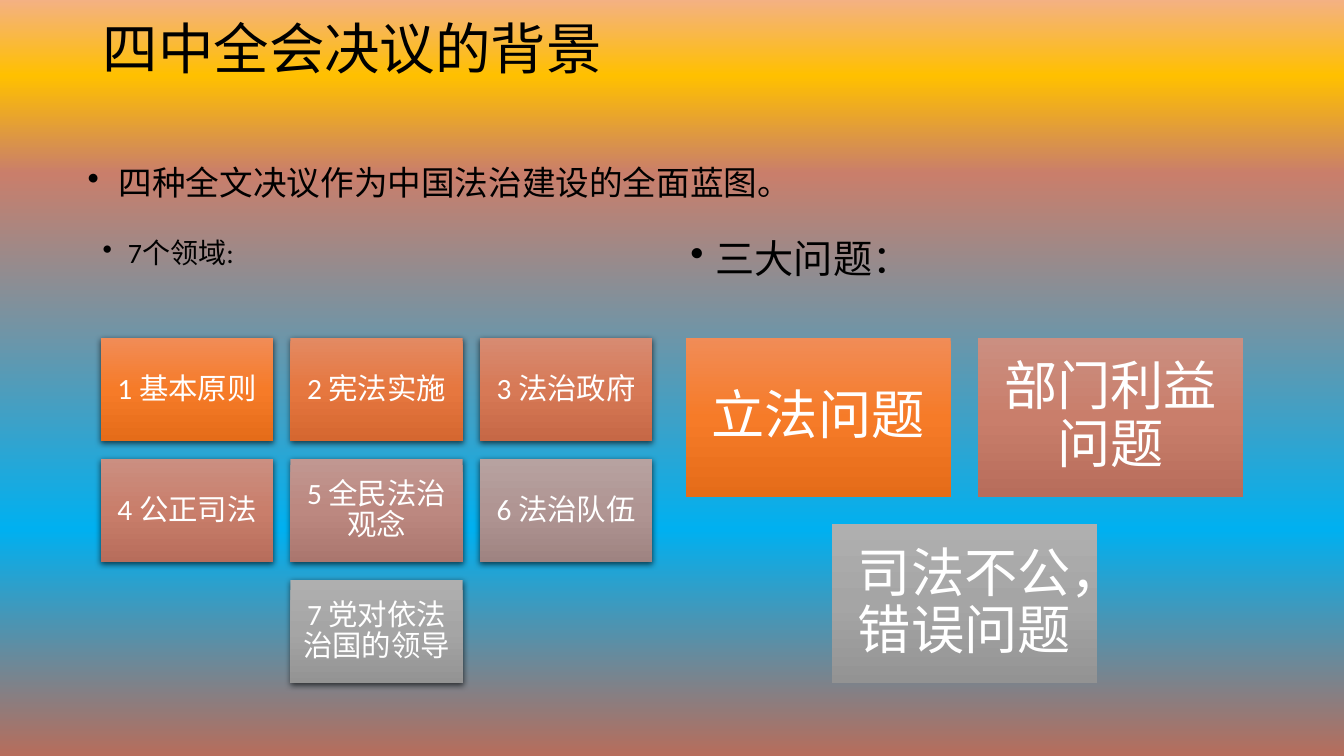
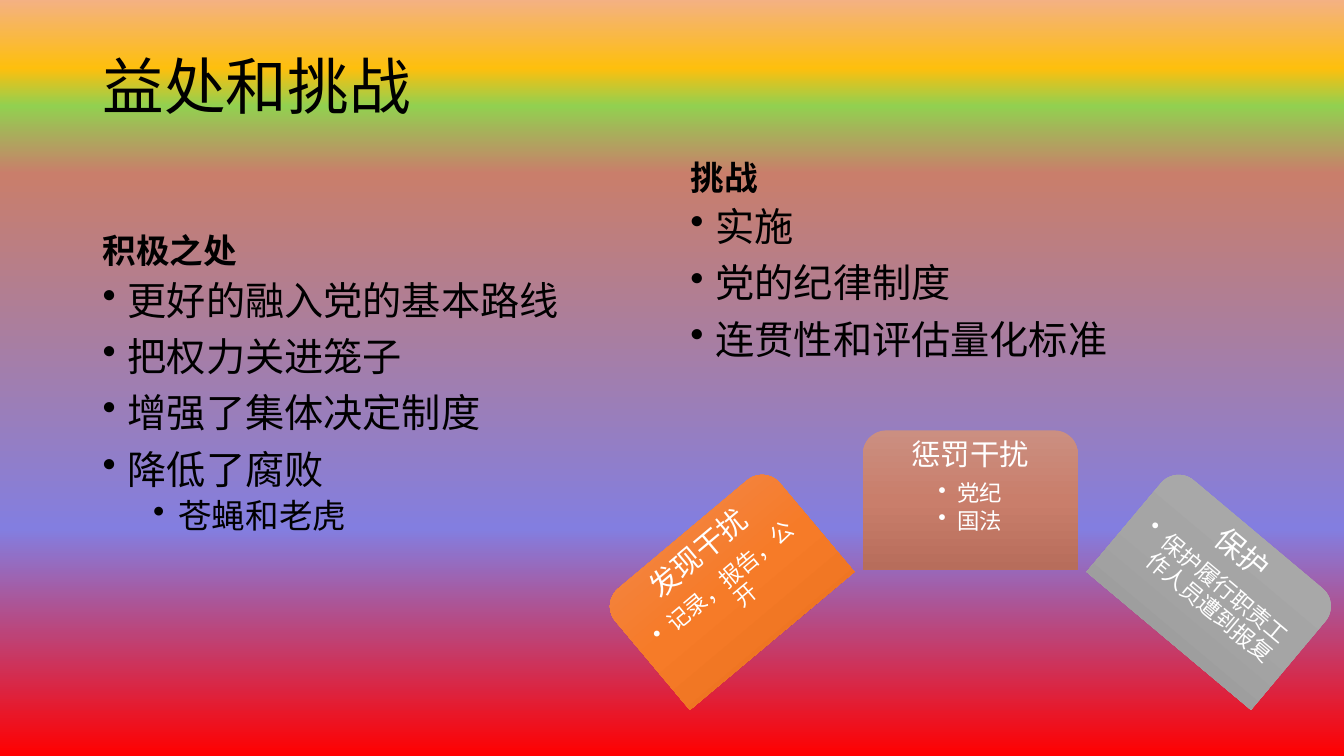
from dataclasses import dataclass

from lxml import etree
from pptx import Presentation
from pptx.dml.color import RGBColor
from pptx.enum.shapes import MSO_SHAPE
from pptx.enum.text import MSO_ANCHOR, PP_ALIGN
from pptx.oxml.ns import qn
from pptx.util import Inches, Pt

FONT = "Calibri"
BLACK = RGBColor(0x00, 0x00, 0x00)
WHITE = RGBColor(0xFF, 0xFF, 0xFF)
PEACH = RGBColor(0xF4, 0xB1, 0x83)
GOLD = RGBColor(0xFF, 0xC0, 0x00)
AMBER = RGBColor(0xFE, 0xBF, 0x0D)
GREEN = RGBColor(0x92, 0xD0, 0x50)
CLAY = RGBColor(0xC9, 0x7E, 0x6B)
DARK_CLAY = RGBColor(0xB7, 0x6D, 0x5B)
SKY = RGBColor(0x00, 0xB0, 0xF0)
VIOLET = RGBColor(0x83, 0x7E, 0xE0)
RED = RGBColor(0xFF, 0x00, 0x00)

ORANGE_TILE = (RGBColor(0xF1, 0x8C, 0x57), RGBColor(0xF6, 0x7B, 0x28), RGBColor(0xE5, 0x6C, 0x19))
RUST_TILE = (RGBColor(0xE3, 0x8A, 0x63), RGBColor(0xE6, 0x77, 0x3F), RGBColor(0xD5, 0x67, 0x30))
COPPER_TILE = (RGBColor(0xD7, 0x8B, 0x72), RGBColor(0xD7, 0x79, 0x56), RGBColor(0xC6, 0x68, 0x46))
CLAY_TILE = (RGBColor(0xCB, 0x8F, 0x81), CLAY, DARK_CLAY)
ROSE_TILE = (RGBColor(0xC1, 0x97, 0x91), RGBColor(0xBC, 0x88, 0x80), RGBColor(0xAA, 0x76, 0x6E))
TAUPE_TILE = (RGBColor(0xB7, 0xA2, 0xA0), RGBColor(0xB0, 0x95, 0x93), RGBColor(0x9E, 0x83, 0x81))
GRAY_TILE = (RGBColor(0xAF, 0xAF, 0xAF), RGBColor(0xA5, 0xA5, 0xA5), RGBColor(0x93, 0x93, 0x93))

BACKGROUND_SKY = ((0, PEACH), (10, GOLD), (23, CLAY), (70, SKY), (100, DARK_CLAY))
BACKGROUND_RED = ((0, PEACH), (9, AMBER), (14, GREEN), (23, CLAY), (70, VIOLET), (100, RED))

LEFT_COLUMN, LEFT_WIDTH = 0.92, 5.64
RIGHT_COLUMN, RIGHT_WIDTH = 6.75, 5.67
TITLE_WIDTH = 11.5


@dataclass
class Line:
    """One paragraph with its size, spacing and optional bullet."""
    text: str
    size: float
    bold: bool = False
    margin: float = 0
    hanging: float = 0
    before: float = 0
    after: float = 0
    spacing: float = 0.9


def apply_gradient(element, fill, stops):
    """Fill an element with a top-to-bottom gradient."""
    fill.gradient()
    fill.gradient_angle = 270
    stop_list = element.xpath(".//a:gsLst")[0]
    for old_stop in list(stop_list):
        stop_list.remove(old_stop)
    for position, color in stops:
        stop = etree.SubElement(stop_list, qn("a:gs"), pos=str(position * 1000))
        etree.SubElement(stop, qn("a:srgbClr"), val=str(color))


def add_bullet(paragraph, margin, hanging):
    """Give a paragraph a round bullet with a hanging indent."""
    properties = paragraph._p.get_or_add_pPr()
    properties.set("marL", str(Inches(margin)))
    properties.set("indent", str(-Inches(hanging)))
    etree.SubElement(properties, qn("a:buChar"), char="•")


def write_lines(frame, lines, color, align, anchor):
    """Write lines into a text frame and format them."""
    frame.word_wrap = True
    frame.vertical_anchor = anchor
    for index, line in enumerate(lines):
        paragraph = frame.add_paragraph() if index else frame.paragraphs[0]
        paragraph.text = line.text
        if line.hanging:
            add_bullet(paragraph, line.margin, line.hanging)
        paragraph.alignment = align
        paragraph.line_spacing = line.spacing
        paragraph.space_before = Pt(line.before if index else 0)
        paragraph.space_after = Pt(line.after)
        font = paragraph.runs[0].font
        font.name = FONT
        font.size = Pt(line.size)
        font.bold = line.bold
        font.color.rgb = color


def add_text(slide, box, lines, anchor=MSO_ANCHOR.TOP):
    """Add a black, left-aligned text box."""
    text_box = slide.shapes.add_textbox(*map(Inches, box))
    write_lines(text_box.text_frame, lines, BLACK, PP_ALIGN.LEFT, anchor)


def add_title(slide, title, top, height, size):
    """Add the slide title."""
    add_text(slide, (LEFT_COLUMN, top, TITLE_WIDTH, height), [Line(title, size)], MSO_ANCHOR.MIDDLE)


def bullets(texts, size=28):
    """Return first-level bullet lines."""
    return [Line(text, size, margin=0.25, hanging=0.25, before=10) for text in texts]


def add_shadow(shape):
    """Add a soft shadow below a shape."""
    effects = shape._element.spPr.find(qn("a:effectLst"))
    shadow = etree.SubElement(effects, qn("a:outerShdw"), blurRad=str(Pt(4.5)),
                              dist=str(Pt(1.5)), dir="5400000", rotWithShape="0")
    shade = etree.SubElement(shadow, qn("a:srgbClr"), val=str(BLACK))
    etree.SubElement(shade, qn("a:alpha"), val="63000")


def add_tile(slide, geometry, box, colors, lines, insets, anchor=MSO_ANCHOR.MIDDLE):
    """Add a gradient tile with centred white text."""
    tile = slide.shapes.add_shape(geometry, *map(Inches, box))
    tile.shadow.inherit = False
    tile.line.fill.background()
    apply_gradient(tile._element, tile.fill, zip((0, 50, 100), colors))
    frame = tile.text_frame
    frame.margin_left = frame.margin_right = Inches(insets[0])
    frame.margin_top = frame.margin_bottom = Inches(insets[1])
    write_lines(frame, lines, WHITE, PP_ALIGN.CENTER, anchor)
    return tile


def add_tile_grid(slide, tiles, columns, origin, tile_size, gap, font_size, inset, shadow=False):
    """Lay tiles out in rows, centring a short last row."""
    left, top = origin
    width, height = tile_size
    for index, (text, colors) in enumerate(tiles):
        row, column = divmod(index, columns)
        in_row = min(columns, len(tiles) - row * columns)
        shift = (columns - in_row) / 2
        box = (left + (column + shift) * (width + gap), top + row * (height + gap), width, height)
        tile = add_tile(slide, MSO_SHAPE.RECTANGLE, box, colors, [Line(text, font_size)], (inset, inset))
        if shadow:
            add_shadow(tile)


def add_tile_arc(slide, tiles):
    """Fan three round-topped tiles out along an arc."""
    for index, (heading, points, colors) in enumerate(tiles):
        turn = index - 1
        box = (6.15 + index * 2.41, 4.27 + abs(turn) * 0.87, 2.13, 1.38)
        lines = [Line(heading, 21, after=7.35)]
        lines += [Line(point, 16, margin=0.19, hanging=0.19, after=2.4) for point in points]
        tile = add_tile(slide, MSO_SHAPE.ROUND_2_SAME_RECTANGLE, box, colors, lines,
                        (0.09, 0.03), MSO_ANCHOR.TOP)
        tile.rotation = turn * 40


def add_slide(presentation, background):
    """Add a blank slide with a gradient background."""
    slide = presentation.slides.add_slide(presentation.slide_layouts[6])
    apply_gradient(slide._element, slide.background.fill, background)
    return slide


def build_context(presentation):
    """Build the slide on the background of the resolution."""
    slide = add_slide(presentation, BACKGROUND_SKY)
    add_title(slide, "四中全会决议的背景", 0.06, 0.9, 39.6)
    blueprint = Line("四种全文决议作为中国法治建设的全面蓝图。", 24, margin=0.31, hanging=0.31, spacing=1.0)
    add_text(slide, (0.77, 1.56, 11.54, 0.5), [blueprint])
    add_text(slide, (LEFT_COLUMN, 2.33, LEFT_WIDTH, 0.8), bullets(["7个领域:"], 20))
    add_text(slide, (RIGHT_COLUMN, 2.33, RIGHT_WIDTH, 0.8), bullets(["三大问题："]))
    fields = [
        ("1 基本原则", ORANGE_TILE), ("2 宪法实施", RUST_TILE), ("3 法治政府", COPPER_TILE),
        ("4 公正司法", CLAY_TILE), ("5 全民法治观念", ROSE_TILE), ("6 法治队伍", TAUPE_TILE),
        ("7 党对依法治国的领导", GRAY_TILE),
    ]
    add_tile_grid(slide, fields, 3, (1, 3.35), (1.71, 1.03), 0.17, 21, 0.09, shadow=True)
    problems = [("立法问题", ORANGE_TILE), ("部门利益问题", CLAY_TILE), ("司法不公，错误问题", GRAY_TILE)]
    add_tile_grid(slide, problems, 2, (6.8, 3.35), (2.63, 1.58), 0.27, 38, 0.16)


def build_benefits(presentation):
    """Build the slide on benefits and challenges."""
    slide = add_slide(presentation, BACKGROUND_RED)
    add_title(slide, "益处和挑战", 0.4, 0.97, 44)
    benefits = bullets(["更好的融入党的基本路线", "把权力关进笼子", "增强了集体决定制度", "降低了腐败"])
    benefits.append(Line("苍蝇和老虎", 24, margin=0.75, hanging=0.25, before=5))
    challenges = bullets(["实施", "党的纪律制度", "连贯性和评估量化标准"])
    columns = [
        ("积极之处", benefits, LEFT_COLUMN, LEFT_WIDTH, 2.74, 4.03),
        ("挑战", challenges, RIGHT_COLUMN, RIGHT_WIDTH, 2.01, 1.75),
    ]
    for heading, points, left, width, top, height in columns:
        add_text(slide, (left, top - 0.9, width, 0.9), [Line(heading, 24, bold=True)], MSO_ANCHOR.BOTTOM)
        add_text(slide, (left, top, width, height), points)
    add_tile_arc(slide, [
        ("发现干扰", ["记录，报告，公开"], ORANGE_TILE),
        ("惩罚干扰", ["党纪", "国法"], CLAY_TILE),
        ("保护", ["保护履行职责工作人员遭到报复"], GRAY_TILE),
    ])


def main():
    """Build and save the presentation."""
    presentation = Presentation()
    presentation.slide_width = Inches(13.33)
    presentation.slide_height = Inches(7.5)
    build_context(presentation)
    build_benefits(presentation)
    presentation.save("out.pptx")


if __name__ == "__main__":
    main()
